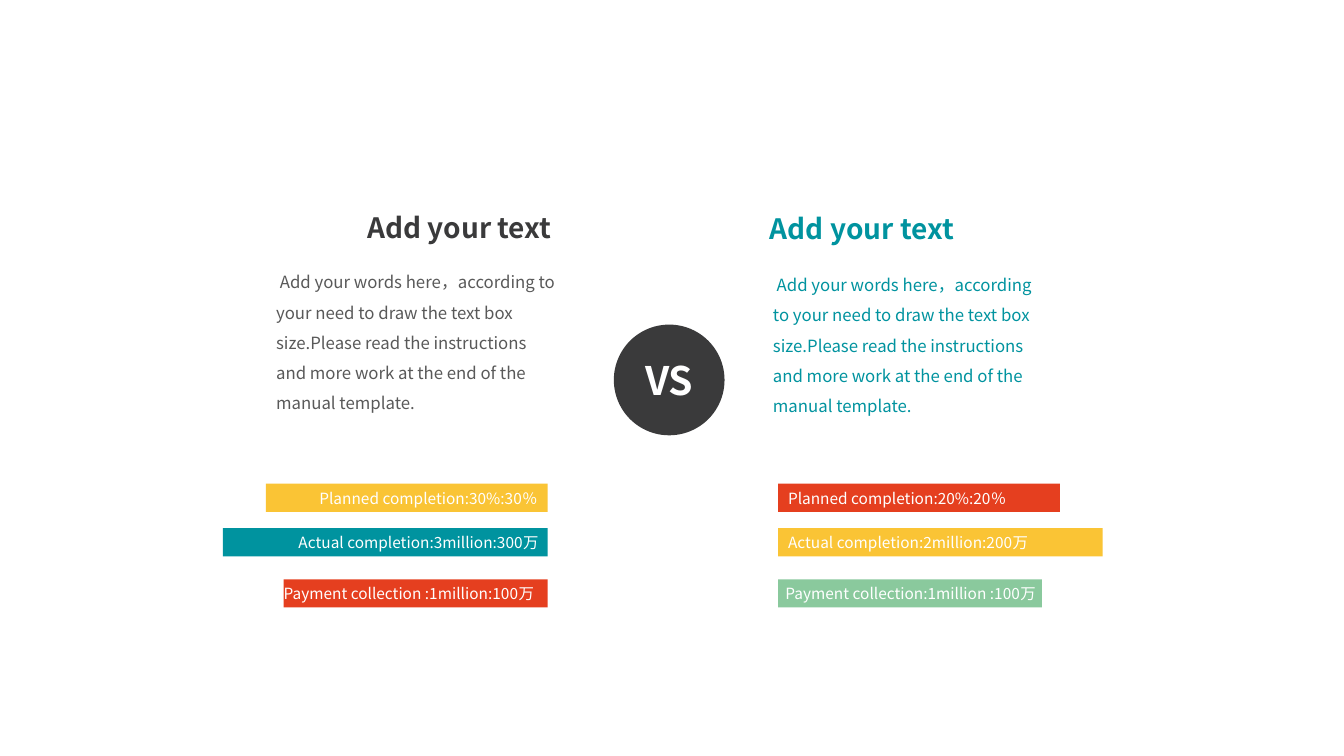
from pptx import Presentation
from pptx import util as u
from pptx.dml.color import RGBColor
from pptx.enum import shapes, text
from pptx.oxml.ns import qn
from lxml import etree

FONT = "Noto Sans CJK JP"
DARK, GREY, WHITE = "3A3A3B", "595959", "FFFFFF"
TEAL, YELLOW, RED, GREEN = "00939F", "FAC435", "E53F1F", "8AC99D"
LEFT, CENTER, RIGHT = text.PP_ALIGN.LEFT, text.PP_ALIGN.CENTER, text.PP_ALIGN.RIGHT

TITLE = "Add your text"
BODY = (" Add your words here，according to your need to draw the text box size."
        "Please read the instructions and more work at the end of the manual template.")

TITLES = [((5.49, 5.18, 8.66, 1.12), DARK, RIGHT),
          ((19.15, 5.21, 9.47, 1.12), TEAL, LEFT)]
BODIES = [((6.71, 6.48, 7.59, 4.09), GREY),
          ((19.23, 6.55, 7.49, 4.09), TEAL)]

BAR_TOPS = [12.19, 13.31, 14.6]
BAR_WIDTHS = [7.1, 8.18, 6.65]
BAR_H = 0.71
LEFT_BARS_END, RIGHT_BARS_START = 13.8, 19.61

LEFT_BARS = [
    (YELLOW, "Planned completion:30%:30％", 6.71, 7.09, RIGHT),
    (TEAL, "Actual completion:3million:300万", 4.88, 8.94, RIGHT),
    (RED, " Payment collection :1million:100万", 6.81, 7.47, LEFT),
]
RIGHT_BARS = [
    (RED, "Planned completion:20%:20％", 19.61, 6.45, LEFT),
    (YELLOW, "Actual completion:2million:200万", 19.61, 7.52, LEFT),
    (GREEN, " Payment collection:1million :100万", 19.3, 7.21, CENTER),
]
VS_BOX = (15.47, 8.18, 2.79, 2.79)


def rgb(value):
    return RGBColor.from_string(value)


def write(sp, words, size, color, align=LEFT, bold=False, spacing=None):
    tf = sp.text_frame
    tf.word_wrap = True
    tf.text = words
    p = tf.paragraphs[0]
    p.alignment = align
    if spacing:
        p.line_spacing = spacing
    r = p.runs[0]
    r.font.size = u.Pt(size)
    r.font.bold = bold
    r.font.color.rgb = rgb(color)
    r.font.name = FONT
    etree.SubElement(r.font._element, qn("a:ea")).set("typeface", FONT)


def add_label(s, box, *args, **kwargs):
    sp = s.shapes.add_textbox(*map(u.Cm, box))
    write(sp, *args, **kwargs)


def add_block(s, kind, box, color):
    sp = s.shapes.add_shape(kind, *map(u.Cm, box))
    sp.shadow.inherit = False
    sp.fill.solid()
    sp.fill.fore_color.rgb = rgb(color)
    sp.line.fill.background()
    return sp


def add_bars(s, bars, start=None, end=None):
    for top, width, (color, words, x, w, align) in zip(BAR_TOPS, BAR_WIDTHS, bars):
        left = end - width if start is None else start
        add_block(s, shapes.MSO_SHAPE.RECTANGLE, (left, top, width, BAR_H), color)
        add_label(s, (x, top, w, BAR_H), words, 11, WHITE, align)


def main():
    prs = Presentation()
    prs.slide_width, prs.slide_height = u.Cm(33.87), u.Cm(19.05)
    s = prs.slides.add_slide(prs.slide_layouts[6])
    for box, color, align in TITLES:
        add_label(s, box, TITLE, 20, color, align, bold=True)
    for box, color in BODIES:
        add_label(s, box, BODY, 12, color, spacing=1.5)
    add_bars(s, LEFT_BARS, end=LEFT_BARS_END)
    add_bars(s, RIGHT_BARS, start=RIGHT_BARS_START)
    vs = add_block(s, shapes.MSO_SHAPE.OVAL, VS_BOX, DARK)
    write(vs, "VS", 28, WHITE, CENTER, bold=True)
    vs.text_frame.vertical_anchor = text.MSO_ANCHOR.MIDDLE
    prs.save("out.pptx")


if __name__ == "__main__":
    main()
